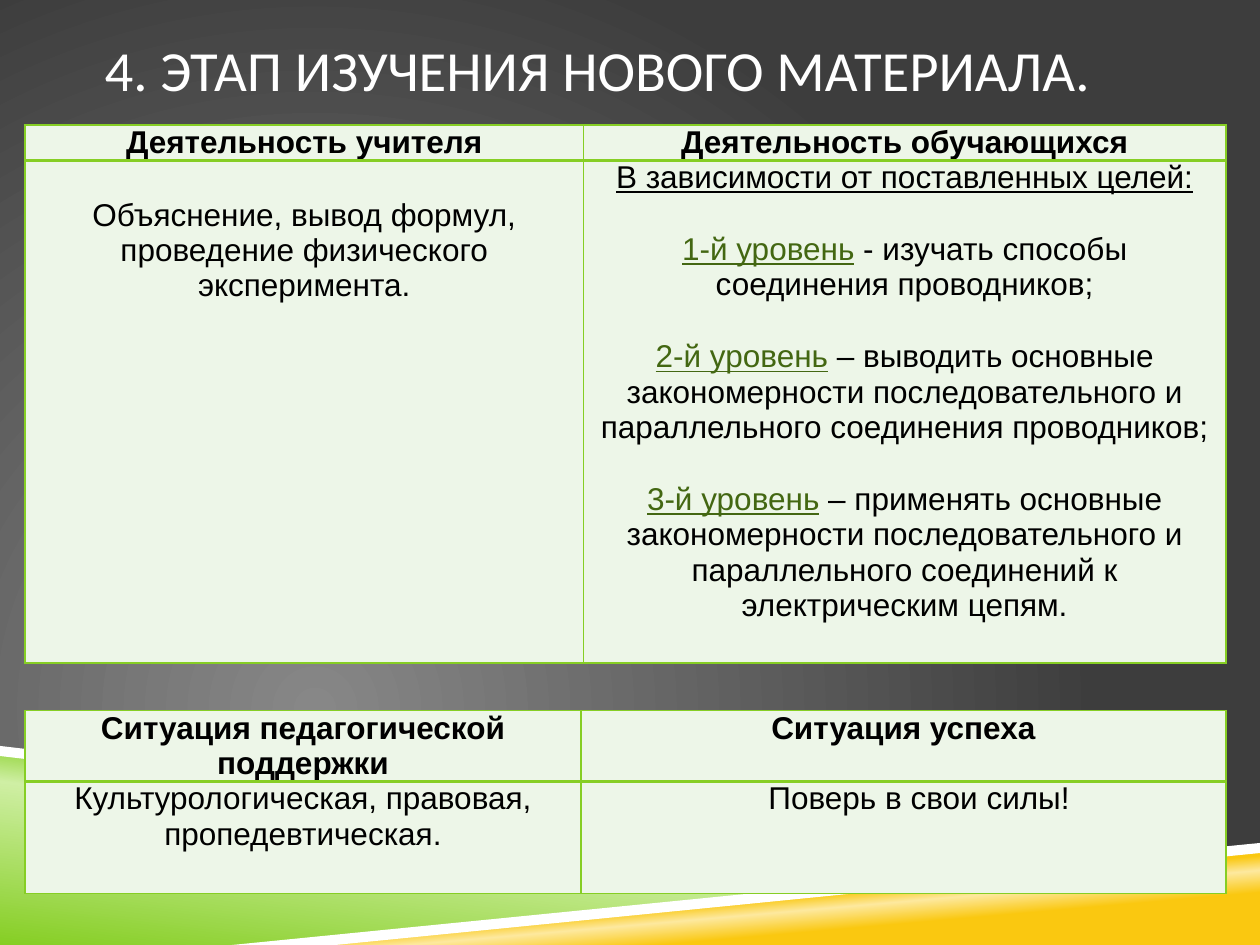
from lxml import etree
from pptx import Presentation
from pptx.dml.color import RGBColor
from pptx.enum.text import MSO_ANCHOR, PP_ALIGN
from pptx.oxml.ns import qn
from pptx.util import Inches, Pt

LEFT = PP_ALIGN.LEFT
CENTER = PP_ALIGN.CENTER
MIDDLE = MSO_ANCHOR.MIDDLE
WHITE = RGBColor(0xFF, 0xFF, 0xFF)
BLACK = RGBColor(0x00, 0x00, 0x00)
GRAY = RGBColor(0x87, 0x87, 0x87)
DARK = RGBColor(0x3D, 0x3D, 0x3D)
LIME = RGBColor(0x86, 0xCE, 0x24)
PALE = RGBColor(0xCF, 0xEF, 0xA4)
GOLD = RGBColor(0xFA, 0xC8, 0x10)
CREAM = RGBColor(0xFD, 0xE9, 0x9F)
MINT = RGBColor(0xED, 0xF6, 0xE8)
MOSS = RGBColor(0x43, 0x67, 0x12)


class Deck:
    font = "Arial"
    size = Pt(18)
    gap = Pt(21)

    def __init__(self):
        self.file = Presentation()
        self.file.slide_width = Inches(10)
        self.file.slide_height = Inches(7.5)
        self.slide = self.file.slides.add_slide(self.file.slide_layouts[5])

    def blend(self, node, stops, angle=None):
        for child in list(node):
            node.remove(child)
        row = etree.SubElement(node, qn("a:gsLst"))
        for place, color in stops:
            stop = etree.SubElement(row, qn("a:gs"), pos=str(place * 1000))
            etree.SubElement(stop, qn("a:srgbClr"), val=str(color))
        if angle is None:
            way = etree.SubElement(node, qn("a:path"), {"path": "circle"})
            etree.SubElement(way, qn("a:fillToRect"),
                             l="50000", t="100000", r="100000", b="50000")
        else:
            etree.SubElement(node, qn("a:lin"), ang=str(angle * 60000), scaled="0")

    def back(self, stops):
        self.slide.background.fill.gradient()
        self.blend(self.slide.element.find(".//" + qn("a:gradFill")), stops)

    def band(self, points, color=None, stops=None, angle=0):
        dots = [(Inches(x), Inches(y)) for x, y in points]
        pen = self.slide.shapes.build_freeform(*dots[0], scale=1.0)
        pen.add_line_segments(dots[1:], close=True)
        shape = pen.convert_to_shape()
        shape.shadow.inherit = False
        shape.line.fill.background()
        if stops:
            shape.fill.gradient()
            self.blend(shape.element.find(".//" + qn("a:gradFill")), stops, angle)
        else:
            shape.fill.solid()
            shape.fill.fore_color.rgb = color

    def run(self, para, text, color=BLACK, bold=False, under=False):
        run = para.add_run()
        run.text = text
        font = run.font
        font.name = self.font
        font.size = self.size
        font.bold = bold
        font.underline = under
        font.color.rgb = color

    def title(self, text, left, top, width, height):
        shape = self.slide.shapes.title
        shape.left, shape.top = Inches(left), Inches(top)
        shape.width, shape.height = Inches(width), Inches(height)
        frame = shape.text_frame
        frame.margin_left = frame.margin_right = 0
        frame.vertical_anchor = MIDDLE
        frame.word_wrap = True
        para = frame.paragraphs[0]
        para.alignment = LEFT
        run = para.add_run()
        run.text = text
        run.font.name = "Calibri"
        run.font.size = Pt(32.4)
        run.font.color.rgb = WHITE

    def edge(self, cell, head):
        props = cell._tc.get_or_add_tcPr()
        for side in "LRTB":
            thick = side == ("B" if head else "T")
            line = etree.SubElement(props, qn("a:ln" + side),
                                    w=str(Pt(2 if thick else 1)))
            fill = etree.SubElement(line, qn("a:solidFill"))
            etree.SubElement(fill, qn("a:srgbClr"), val=str(LIME))

    def cell(self, cell, paras, head):
        self.edge(cell, head)
        cell.fill.solid()
        cell.fill.fore_color.rgb = MINT
        cell.margin_left = cell.margin_right = Inches(0.07)
        cell.margin_top = cell.margin_bottom = 0
        frame = cell.text_frame
        for i, runs in enumerate(paras):
            para = frame.add_paragraph() if i else frame.paragraphs[0]
            para.alignment = CENTER
            if i:
                para.space_before = self.gap
            for text, color, under in runs:
                self.run(para, text, color, head, under)

    def table(self, left, top, cols, rows, cells):
        grid = self.slide.shapes.add_table(
            len(rows), len(cols), Inches(left), Inches(top),
            Inches(sum(cols)), Inches(sum(rows))).table
        grid.horz_banding = False
        for col, width in zip(grid.columns, cols):
            col.width = Inches(width)
        for row, height in zip(grid.rows, rows):
            row.height = Inches(height)
        for r, line in enumerate(cells):
            for c, paras in enumerate(line):
                self.cell(grid.cell(r, c), paras, r == 0)
        return grid


def plain(text, under=False):
    return [(text, BLACK, under)]


def level(num, text):
    return [(f"{num}-й уровень", MOSS, True), (" ", MOSS, False),
            (text, BLACK, False)]


def main():
    deck = Deck()
    deck.back([(0, GRAY), (100, DARK)])
    deck.band([(0, 5.97), (7.92, 6.92), (2, 7.5), (0, 7.5)],
              stops=[(0, LIME), (52, PALE), (66, LIME)], angle=277)
    deck.band([(1.98, 7.5), (10, 6.72), (10, 7.5)],
              stops=[(28, GOLD), (40, CREAM), (48, GOLD)], angle=265)
    deck.band([(0, 5.92), (0, 6), (7.9, 6.93), (8.32, 6.9)], WHITE)
    deck.band([(10, 6.69), (1.84, 7.5), (2.66, 7.5), (10, 6.77)], WHITE)
    deck.title("4. ЭТАП ИЗУЧЕНИЯ НОВОГО МАТЕРИАЛА.", 0.83, 0.28, 8.27, 0.54)

    goals = [
        plain("В зависимости от поставленных целей:", True),
        level(1, "- изучать способы соединения проводников;"),
        level(2, "– выводить основные закономерности последовательного и "
                 "параллельного соединения проводников;"),
        level(3, "– применять основные закономерности последовательного и "
                 "параллельного соединений к электрическим цепям."),
    ]
    work = deck.table(0.2, 0.99, [4.43, 5.1], [0.28, 3.99], [
        [[plain("Деятельность учителя")], [plain("Деятельность обучающихся")]],
        [[plain("Объяснение, вывод формул, проведение физического "
                "эксперимента.")], goals],
    ])
    work.cell(1, 0).margin_top = Inches(0.3)
    mood = deck.table(0.2, 5.64, [4.41, 5.12], [0.56, 0.89], [
        [[plain("Ситуация педагогической поддержки")],
         [plain("Ситуация успеха")]],
        [[plain("Культурологическая, правовая, пропедевтическая.")],
         [plain("Поверь в свои силы!")]],
    ])
    mood.cell(1, 1).margin_left = Inches(0.32)
    deck.file.save("out.pptx")


if __name__ == "__main__":
    main()
